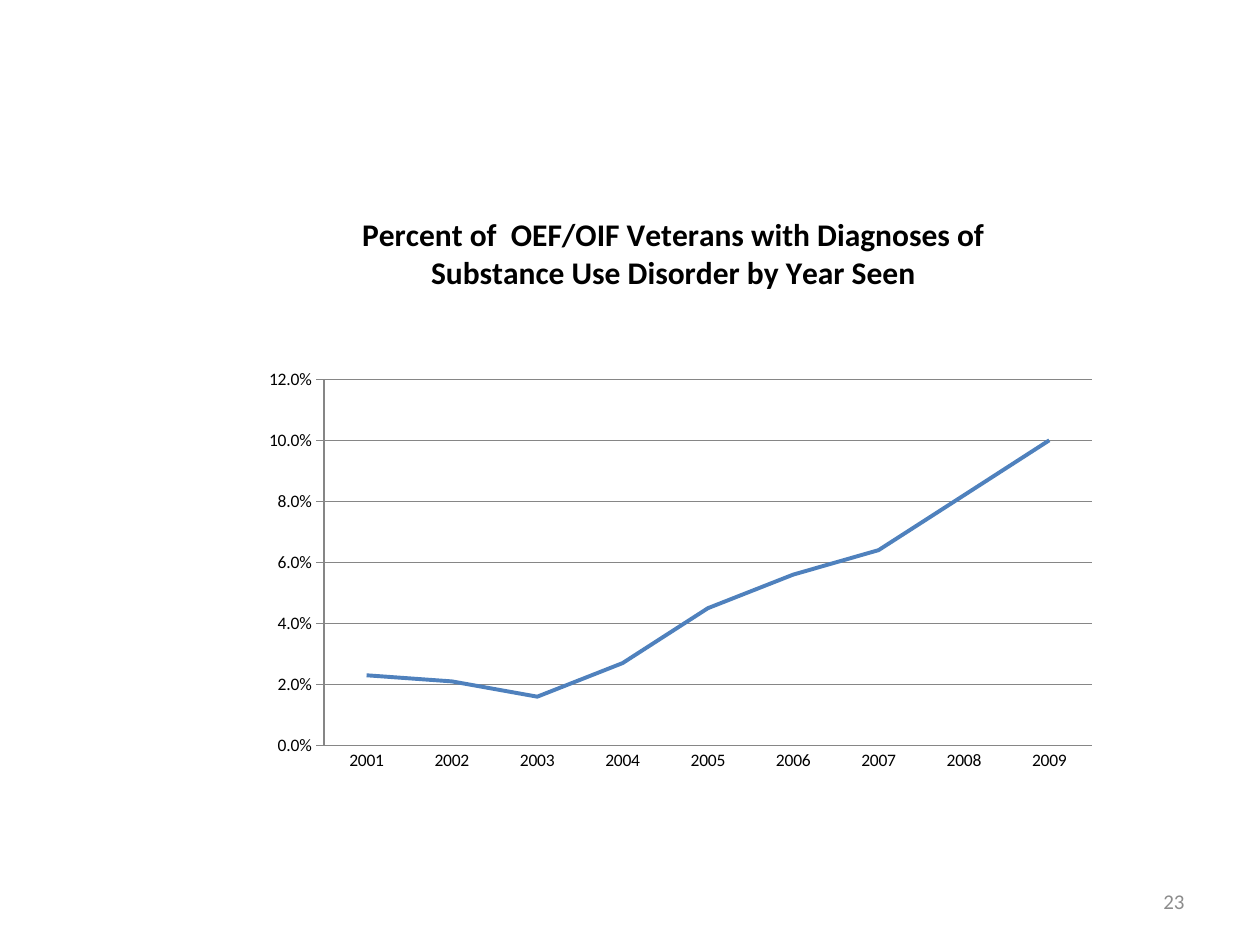
from dataclasses import dataclass

from lxml import etree
from pptx import Presentation
from pptx.chart.data import CategoryChartData
from pptx.dml.color import RGBColor
from pptx.enum import chart as chart_enums, text
from pptx.util import Inches, Pt

FONT = "Calibri"
BLACK = RGBColor(0x00, 0x00, 0x00)
GRAY = RGBColor(0x8C, 0x8C, 0x8C)
AXIS_GRAY = RGBColor(0x86, 0x86, 0x86)
BLUE = RGBColor(0x4F, 0x81, 0xBD)

CHART_TITLE = "Percent of  OEF/OIF Veterans with Diagnoses of Substance Use Disorder by Year Seen"
YEARS = [str(year) for year in range(2001, 2010)]
SHARES = [0.023, 0.021, 0.016, 0.027, 0.045, 0.056, 0.064, 0.082, 0.1]
PLOT_LAYOUT = {"layoutTarget": "inner", "xMode": "edge", "yMode": "edge",
               "x": 0.095, "y": 0.306, "w": 0.89, "h": 0.585}


@dataclass
class Box:
    left: float
    top: float
    width: float
    height: float

    def lengths(self) -> list:
        return [Inches(n) for n in (self.left, self.top, self.width, self.height)]


def apply_format(target, values: dict) -> None:
    for name, value in values.items():
        setattr(target, name, value)


def format_font(font, size: float, color: RGBColor, bold: bool = False) -> None:
    apply_format(font, {"name": FONT, "size": Pt(size), "bold": bold})
    font.color.rgb = color


def format_line(line, color: RGBColor, width: float) -> None:
    line.color.rgb = color
    line.width = Pt(width)


def place_plot(chart, values: dict) -> None:
    """Fix the inner plot area as fractions of the chart."""
    plot_area = chart.plots[0]._element.getparent()
    namespace = etree.QName(plot_area).namespace
    tag = "{%s}" % namespace
    for old_layout in plot_area.findall(tag + "layout"):
        plot_area.remove(old_layout)
    layout = etree.Element(tag + "layout")
    manual = etree.SubElement(layout, tag + "manualLayout")
    for name, value in values.items():
        etree.SubElement(manual, tag + name).set("val", str(value))
    plot_area.insert(0, layout)


def add_line_chart(slide, box: Box) -> None:
    data = CategoryChartData(number_format="0.0%")
    data.categories = YEARS
    data.add_series("Series 1", SHARES)
    chart = slide.shapes.add_chart(
        chart_enums.XL_CHART_TYPE.LINE, *box.lengths(), data).chart
    chart.has_legend = False
    format_font(chart.font, 10, BLACK)

    # Chart title
    chart.has_title = True
    chart.chart_title.include_in_layout = False
    paragraph = chart.chart_title.text_frame.paragraphs[0]
    run = paragraph.add_run()
    run.text = CHART_TITLE
    format_font(run.font, 18, BLACK, bold=True)

    # Axes
    tick = chart_enums.XL_TICK_MARK
    apply_format(chart.category_axis, {
        "major_tick_mark": tick.NONE, "minor_tick_mark": tick.NONE,
        "has_major_gridlines": False})
    apply_format(chart.value_axis, {
        "major_tick_mark": tick.OUTSIDE, "minor_tick_mark": tick.NONE,
        "has_major_gridlines": True, "minimum_scale": 0,
        "maximum_scale": 0.12, "major_unit": 0.02})
    apply_format(chart.value_axis.tick_labels, {
        "number_format": "0.0%", "number_format_is_linked": False})
    for part in (chart.category_axis, chart.value_axis,
                 chart.value_axis.major_gridlines):
        format_line(part.format.line, AXIS_GRAY, 0.75)

    # Series
    plot = chart.plots[0]
    plot.vary_by_categories = False
    series = plot.series[0]
    series.smooth = False
    series.marker.style = chart_enums.XL_MARKER_STYLE.NONE
    format_line(series.format.line, BLUE, 2.25)
    place_plot(chart, PLOT_LAYOUT)


def add_slide_number(slide, box: Box, number: str) -> None:
    frame = slide.shapes.add_textbox(*box.lengths()).text_frame
    apply_format(frame, {"word_wrap": True,
                         "vertical_anchor": text.MSO_ANCHOR.MIDDLE})
    paragraph = frame.paragraphs[0]
    paragraph.alignment = text.PP_ALIGN.RIGHT
    run = paragraph.add_run()
    run.text = number
    format_font(run.font, 12, GRAY)


def main() -> None:
    presentation = Presentation()
    apply_format(presentation, {"slide_width": Inches(10),
                                "slide_height": Inches(7.5)})
    # The only heading belongs to the chart, so the layout is blank
    slide = presentation.slides.add_slide(presentation.slide_layouts[6])
    add_line_chart(slide, Box(1.92, 1.49, 6.85, 4.97))
    add_slide_number(slide, Box(7.17, 6.95, 2.33, 0.4), "23")
    presentation.save("out.pptx")


if __name__ == "__main__":
    main()
